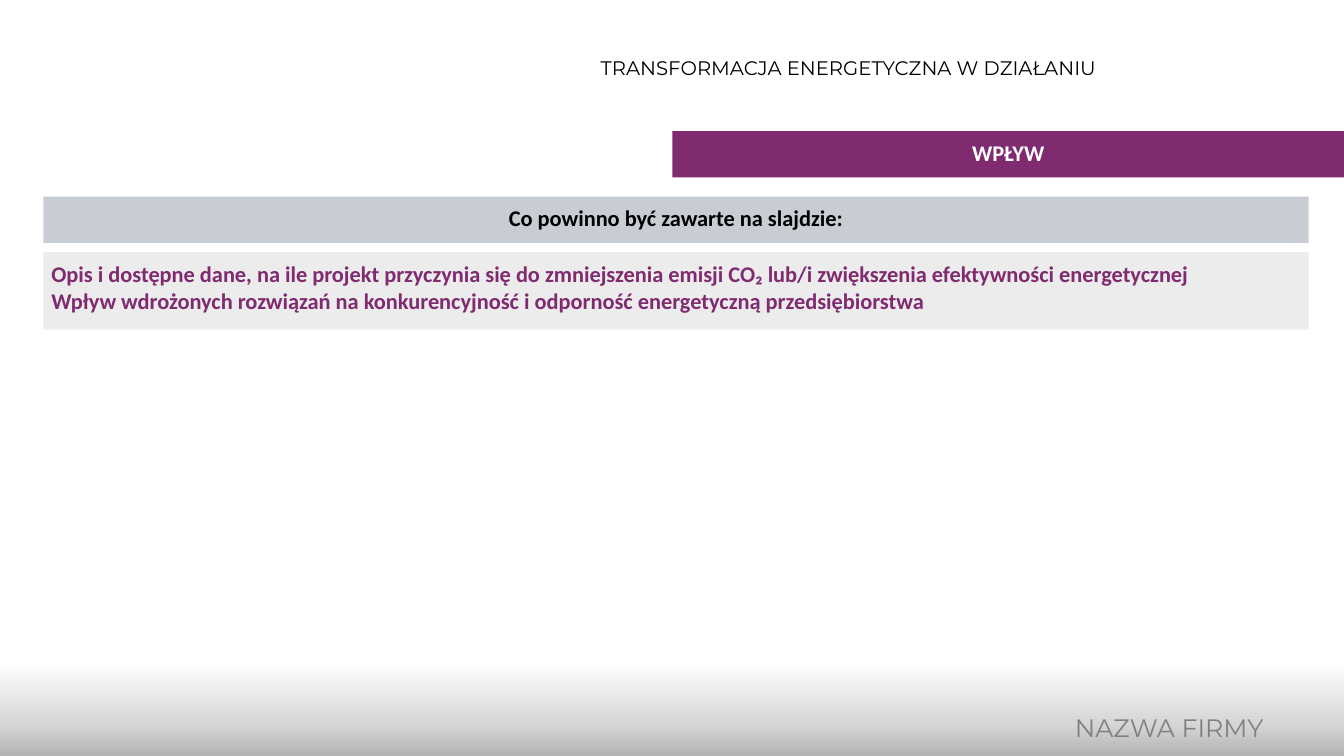
from copy import deepcopy
from lxml import etree
from pptx import Presentation
from pptx import util as u
from pptx.dml.color import RGBColor
from pptx.enum import shapes, text
from pptx.oxml.ns import qn

PURPLE = "802A70"


def paint(color_format, color, alpha=None):
    color_format.rgb = RGBColor.from_string(color)
    if alpha is not None:
        node = color_format._xFill.find(qn("a:srgbClr"))
        etree.SubElement(node, qn("a:alpha")).set("val", str(alpha * 1000))


def write(box, lines, size=16, font="Calibri", color="000000", bold=False,
          align=text.PP_ALIGN.CENTER, anchor=text.MSO_ANCHOR.TOP,
          spacing=1.0, inset=(0.08, 0.08)):
    frame = box.text_frame
    frame.word_wrap = True
    frame.auto_size = text.MSO_AUTO_SIZE.NONE
    frame.vertical_anchor = anchor
    frame.margin_left = frame.margin_right = u.Inches(inset[0])
    frame.margin_top = frame.margin_bottom = u.Inches(inset[1])
    for index, line in enumerate(lines):
        para = frame.paragraphs[0] if index == 0 else frame.add_paragraph()
        para.alignment = align
        para.line_spacing = spacing
        para.space_before = u.Pt(0)
        span = para.add_run()
        span.text = line
        span.font.size = u.Pt(size)
        span.font.name = font
        span.font.bold = bold
        paint(span.font.color, color)


deck = Presentation()
deck.slide_width = u.Inches(13.33)
deck.slide_height = u.Inches(7.5)
page = deck.slides.add_slide(deck.slide_layouts[5])

footer = page.shapes.add_shape(
    shapes.MSO_SHAPE.RECTANGLE, 0, u.Inches(6.57), u.Inches(13.33), u.Inches(1.19))
footer.shadow.inherit = False
footer.line.fill.background()
footer.fill.gradient()
footer.fill.gradient_angle = 90
stop_list = footer._element.spPr.find(qn("a:gradFill")).find(qn("a:gsLst"))
stop_list.insert(1, deepcopy(stop_list[0]))
stops = [(0, "979797"), (0.5, "D7D7D7"), (1, "FFFFFF")]
for stop, (position, color) in zip(footer.fill.gradient_stops, stops):
    stop.position = position
    paint(stop.color, color)

title = page.shapes.title
title.left, title.top = u.Inches(5.82), u.Inches(0.3)
title.width, title.height = u.Inches(5.19), u.Inches(0.67)
write(title, ["TRANSFORMACJA ENERGETYCZNA W DZIAŁANIU"], size=14, font="Montserrat",
      anchor=text.MSO_ANCHOR.MIDDLE, spacing=1.3, inset=(0.1, 0.05))

company = page.shapes.add_textbox(
    u.Inches(9.62), u.Inches(6.91), u.Inches(3.01), u.Inches(0.66))
write(company, ["NAZWA FIRMY"], size=18, font="Montserrat", color="808080",
      align=text.PP_ALIGN.RIGHT, anchor=text.MSO_ANCHOR.MIDDLE, spacing=0.9,
      inset=(0.1, 0.05))

bars = [
    ((0.43, 1.95, 12.55, 0.46), "44546A", 29, "000000", text.PP_ALIGN.CENTER,
     ["Co powinno być zawarte na slajdzie:"]),
    ((0.43, 2.5, 12.55, 0.77), "BFBFBF", 29, PURPLE, text.PP_ALIGN.LEFT,
     ["Opis i dostępne dane, na ile projekt przyczynia się do zmniejszenia emisji CO₂ "
      "lub/i zwiększenia efektywności energetycznej",
      "Wpływ wdrożonych rozwiązań na konkurencyjność i odporność energetyczną "
      "przedsiębiorstwa"]),
    ((6.67, 1.3, 6.66, 0.46), PURPLE, None, "FFFFFF", text.PP_ALIGN.CENTER, ["WPŁYW"]),
]
for place, fill, alpha, color, align, lines in bars:
    bar = page.shapes.add_shape(
        shapes.MSO_SHAPE.RECTANGLE, *[u.Inches(value) for value in place])
    bar.shadow.inherit = False
    bar.line.fill.background()
    bar.fill.solid()
    paint(bar.fill.fore_color, fill, alpha)
    write(bar, lines, color=color, bold=True, align=align)

deck.save("out.pptx")
